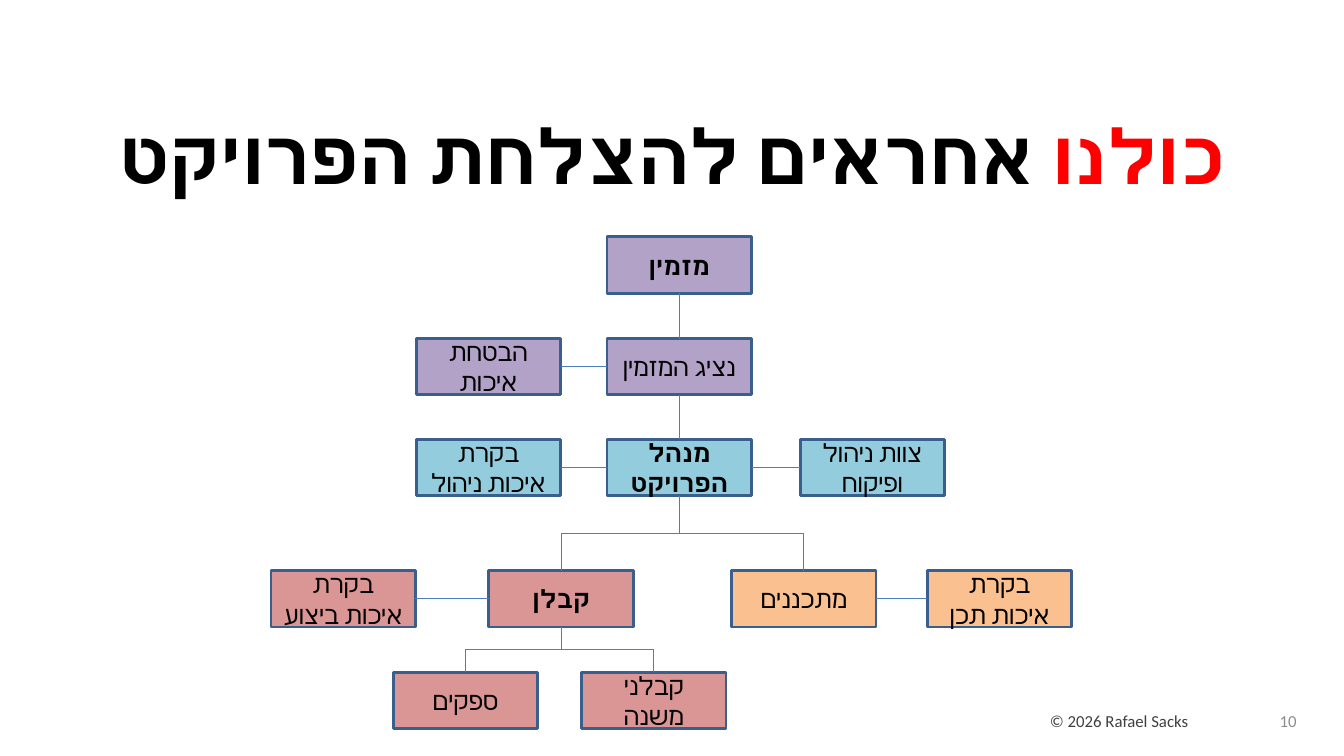
"""Build the slide with the chart of responsibilities in a project."""
from dataclasses import dataclass

from lxml import etree
from pptx import Presentation
from pptx.dml.color import RGBColor
from pptx.enum.shapes import MSO_CONNECTOR, MSO_SHAPE
from pptx.enum.text import MSO_ANCHOR, PP_ALIGN
from pptx.oxml.ns import qn
from pptx.util import Cm, Pt

RECTANGLE = MSO_SHAPE.RECTANGLE
STRAIGHT, ELBOW = MSO_CONNECTOR.STRAIGHT, MSO_CONNECTOR.ELBOW
LEFT, CENTER = PP_ALIGN.LEFT, PP_ALIGN.CENTER
TOP_ANCHOR, MIDDLE_ANCHOR = MSO_ANCHOR.TOP, MSO_ANCHOR.MIDDLE
TOP_SIDE, LEFT_SIDE, BOTTOM_SIDE, RIGHT_SIDE = range(4)
QUARTER_TURN = "5400000"


@dataclass(frozen=True)
class Theme:
    """Colours, font and type sizes of the slide."""
    font: str = "Calibri"
    title_size: int = 54
    role_size: int = 18
    footer_size: int = 12
    ink: str = "000000"
    accent: str = "FF0000"
    copyright: str = "404040"
    number: str = "8C8C8C"
    client: str = "B3A2C7"
    management: str = "93CDDD"
    design: str = "FAC090"
    construction: str = "D99694"
    border: str = "3A5F8C"
    link: str = "4B7EBC"


THEME = Theme()
ROLE_WIDTH, ROLE_HEIGHT = 3.64, 1.42
CLIENT_ROW, AGENT_ROW, MANAGER_ROW, CONTRACTOR_ROW, SUPPLIER_ROW = (
    5.97, 8.53, 11.07, 14.38, 16.94)

ROLES = {
    "client": ("מזמין", 15.3, CLIENT_ROW, THEME.client, True),
    "agent": ("נציג המזמין", 15.3, AGENT_ROW, THEME.client, False),
    "assurance": ("הבטחת איכות", 10.49, AGENT_ROW, THEME.client, False),
    "manager": ("מנהל הפרויקט", 15.3, MANAGER_ROW, THEME.management, True),
    "management_qc": ("בקרת איכות ניהול", 10.49, MANAGER_ROW, THEME.management, False),
    "team": ("צוות ניהול ופיקוח", 20.17, MANAGER_ROW, THEME.management, False),
    "designers": ("מתכננים", 18.44, CONTRACTOR_ROW, THEME.design, False),
    "design_qc": ("בקרת איכות תכן", 23.37, CONTRACTOR_ROW, THEME.design, False),
    "contractor": ("קבלן", 12.32, CONTRACTOR_ROW, THEME.construction, True),
    "execution_qc": ("בקרת איכות ביצוע", 6.83, CONTRACTOR_ROW, THEME.construction, False),
    "subcontractors": ("קבלני משנה", 14.66, SUPPLIER_ROW, THEME.construction, False),
    "suppliers": ("ספקים", 9.91, SUPPLIER_ROW, THEME.construction, False),
}
REPORTING_LINES = (
    ("client", "agent"), ("agent", "manager"),
    ("manager", "designers"), ("manager", "contractor"),
    ("contractor", "subcontractors"), ("contractor", "suppliers"),
)
SIDE_LINKS = (
    ("assurance", "agent"), ("management_qc", "manager"), ("manager", "team"),
    ("execution_qc", "contractor"), ("designers", "design_qc"),
)


def rgb(code):
    """Turn a hexadecimal code into a colour."""
    return RGBColor.from_string(code)


def write_text(frame, *pieces, size, bold=False, align=LEFT, anchor=TOP_ANCHOR,
               wrap=True, rtl=False):
    """Write (text, colour) pieces as one formatted paragraph."""
    frame.word_wrap = wrap
    frame.vertical_anchor = anchor
    paragraph = frame.paragraphs[0]
    paragraph.alignment = align
    if rtl:
        paragraph._p.get_or_add_pPr().set("rtl", "1")
    for text, color in pieces:
        run = paragraph.add_run()
        run.text = text
        run.font.name = THEME.font
        run.font.size = Pt(size)
        run.font.bold = bold
        run.font.color.rgb = rgb(color)
        complex_script = etree.SubElement(run.font._element, qn("a:cs"))
        complex_script.set("typeface", THEME.font)


def add_text(slide, left, top, width, height, *pieces, **text_format):
    """Add a text box and return its text frame."""
    box = slide.shapes.add_textbox(Cm(left), Cm(top), Cm(width), Cm(height))
    write_text(box.text_frame, *pieces, **text_format)
    return box.text_frame


def add_role(slide, label, left, top, fill, bold):
    """Add one role of the organisation chart."""
    role = slide.shapes.add_shape(
        RECTANGLE, Cm(left), Cm(top), Cm(ROLE_WIDTH), Cm(ROLE_HEIGHT))
    role.shadow.inherit = False
    role.fill.solid()
    role.fill.fore_color.rgb = rgb(fill)
    role.line.color.rgb = rgb(THEME.border)
    role.line.width = Pt(2)
    write_text(role.text_frame, (label, THEME.ink), size=THEME.role_size,
               bold=bold, align=CENTER, anchor=MIDDLE_ANCHOR, rtl=True)
    return role


def add_link(slide, start, start_side, end, end_side, kind=STRAIGHT):
    """Join the sides of two roles with a thin line."""
    link = slide.shapes.add_connector(kind, 0, 0, 0, 0)
    link.begin_connect(start, start_side)
    link.end_connect(end, end_side)
    link.line.color.rgb = rgb(THEME.link)
    link.line.width = Pt(0.75)
    etree.SubElement(link.element.spPr, qn("a:effectLst"))
    return link


def turn_downward(link):
    """Turn an elbow by a quarter so that it leaves and arrives vertically."""
    across, down = link.end_x - link.begin_x, link.end_y - link.begin_y
    center_x = (link.begin_x + link.end_x) // 2
    center_y = (link.begin_y + link.end_y) // 2
    link.begin_x, link.end_x = center_x - down // 2, center_x + down // 2
    link.begin_y, link.end_y = center_y + across // 2, center_y - across // 2
    link.element.spPr.find(qn("a:xfrm")).set("rot", QUARTER_TURN)


def add_reporting_line(slide, senior, junior):
    """Join a senior role to a junior one below it."""
    aligned = senior.left == junior.left
    link = add_link(slide, senior, BOTTOM_SIDE, junior, TOP_SIDE,
                    STRAIGHT if aligned else ELBOW)
    if not aligned:
        turn_downward(link)


def main():
    """Build and save the slide."""
    deck = Presentation()
    deck.slide_width, deck.slide_height = Cm(33.87), Cm(19.05)
    slide = deck.slides.add_slide(deck.slide_layouts[6])

    add_text(slide, 26.21, 17.78, 4.06, 0.76,
             ("© 2026 Rafael Sacks", THEME.copyright),
             size=THEME.footer_size, wrap=False)
    title = add_text(slide, 1.7, 2.03, 30.48, 8.38,
                     ("כולנו", THEME.accent), (" אחראים להצלחת הפרויקט", THEME.ink),
                     size=THEME.title_size, bold=True, align=CENTER,
                     anchor=MIDDLE_ANCHOR, rtl=True)
    title.margin_bottom = Cm(4.78)
    add_text(slide, 32, 17.65, 1.85, 1.02, ("10", THEME.number),
             size=THEME.footer_size, anchor=MIDDLE_ANCHOR)

    roles = {key: add_role(slide, *role) for key, role in ROLES.items()}
    for senior, junior in REPORTING_LINES:
        add_reporting_line(slide, roles[senior], roles[junior])
    for left_role, right_role in SIDE_LINKS:
        add_link(slide, roles[left_role], RIGHT_SIDE, roles[right_role], LEFT_SIDE)

    deck.save("out.pptx")


if __name__ == "__main__":
    main()
